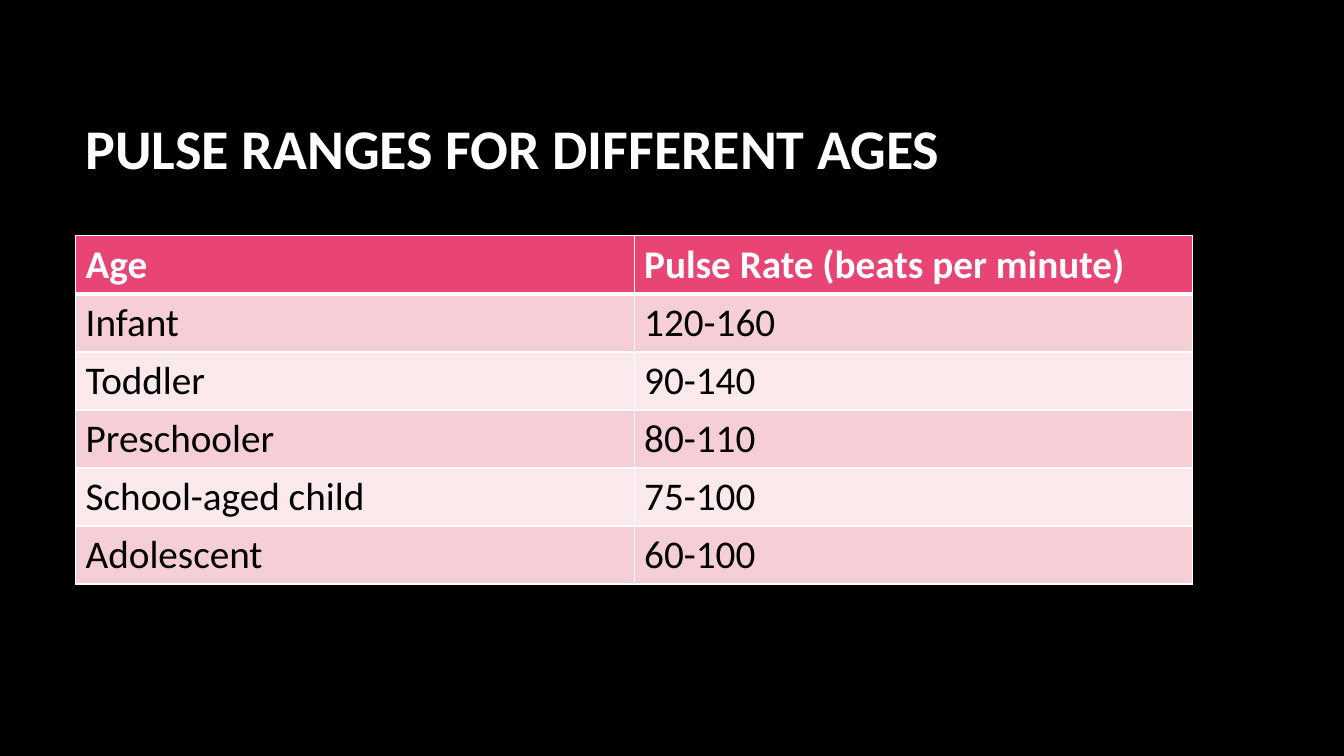
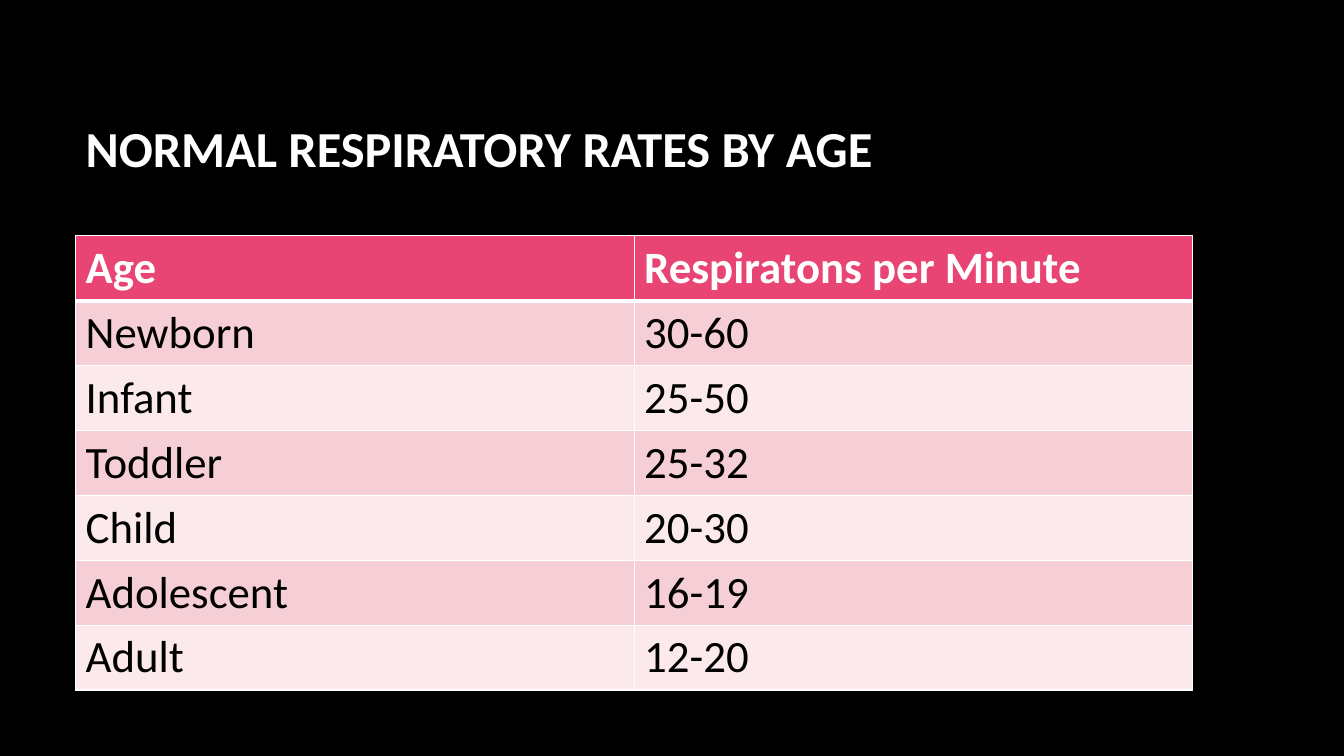
from lxml import etree
from pptx import Presentation
from pptx.dml.color import RGBColor
from pptx.enum import text
from pptx.oxml import ns
from pptx.util import Pt

COLORS = {
    "background": "000000",
    "light": "FFFFFF",
    "dark": "000000",
    "header": "E84574",
    "odd_row": "F6CFD6",
    "even_row": "FBE9EB",
}
FONT = "Calibri"
LEFT, WIDTH = 54, 798
TITLE_TOP, TITLE_HEIGHT = 48, 114.5
TABLE_TOP = 168.5
LINE_SPACING = 1.22
CELL_PADDING = 3.6

SLIDES = [
    {
        "title": "PULSE RANGES FOR DIFFERENT AGES",
        "title_size": 40,
        "table_size": 28,
        "rows": [
            ("Age", "Pulse Rate (beats per minute)"),
            ("Infant", "120-160"),
            ("Toddler", "90-140"),
            ("Preschooler", "80-110"),
            ("School-aged child", "75-100"),
            ("Adolescent", "60-100"),
        ],
    },
    {
        "title": "NORMAL RESPIRATORY RATES BY AGE",
        "title_size": 36,
        "table_size": 32,
        "rows": [
            ("Age", "Respiratons per Minute"),
            ("Newborn", "30-60"),
            ("Infant", "25-50"),
            ("Toddler", "25-32"),
            ("Child", "20-30"),
            ("Adolescent", "16-19"),
            ("Adult", "12-20"),
        ],
    },
]


def rgb(name):
    return RGBColor.from_string(COLORS[name])


def write(tf, content, size, color="light", bold=False):
    p = tf.paragraphs[0]
    p.alignment = text.PP_ALIGN.LEFT
    r = p.add_run()
    r.text = content
    r.font.name = FONT
    r.font.size = Pt(size)
    r.font.bold = bold
    r.font.color.rgb = rgb(color)


def set_borders(cell, **widths):
    """Draw light borders; widths are points keyed by L, R, T and B, in that order."""
    tc_pr = cell._tc.get_or_add_tcPr()
    for side, width in widths.items():
        ln = etree.SubElement(tc_pr, ns.qn(f"a:ln{side}"), w=str(Pt(width)))
        fill = etree.SubElement(ln, ns.qn("a:solidFill"))
        etree.SubElement(fill, ns.qn("a:srgbClr"), val=COLORS["light"])


def add_rate_table(s, rows, size):
    row_height = size * LINE_SPACING + 2 * CELL_PADDING
    columns = len(rows[0])
    table = s.shapes.add_table(
        len(rows), columns, Pt(LEFT), Pt(TABLE_TOP), Pt(WIDTH), Pt(row_height * len(rows))
    ).table
    for i, row in enumerate(rows):
        header = i == 0
        fill = "header" if header else "odd_row" if i % 2 else "even_row"
        for j, content in enumerate(row):
            cell = table.cell(i, j)
            set_borders(cell, L=1, R=1, T=3 if i == 1 else 1, B=3 if header else 1)
            cell.fill.solid()
            cell.fill.fore_color.rgb = rgb(fill)
            write(cell.text_frame, content, size, "light" if header else "dark", header)


def set_up_layout(prs):
    """Give the title-only layout the shared background and title position."""
    bg = prs.slide_master.background.fill
    bg.solid()
    bg.fore_color.rgb = rgb("background")
    layout = prs.slide_layouts.get_by_name("Title Only")
    title = layout.placeholders[0]
    title.left, title.top = Pt(LEFT), Pt(TITLE_TOP)
    title.width, title.height = Pt(WIDTH), Pt(TITLE_HEIGHT)
    title.text_frame.vertical_anchor = text.MSO_ANCHOR.MIDDLE
    title.text_frame.auto_size = text.MSO_AUTO_SIZE.NONE
    return layout


def main():
    prs = Presentation()
    prs.slide_width, prs.slide_height = Pt(960), Pt(540)
    layout = set_up_layout(prs)
    for content in SLIDES:
        s = prs.slides.add_slide(layout)
        write(s.shapes.title.text_frame, content["title"], content["title_size"], bold=True)
        add_rate_table(s, content["rows"], content["table_size"])
    prs.save("out.pptx")


if __name__ == "__main__":
    main()
